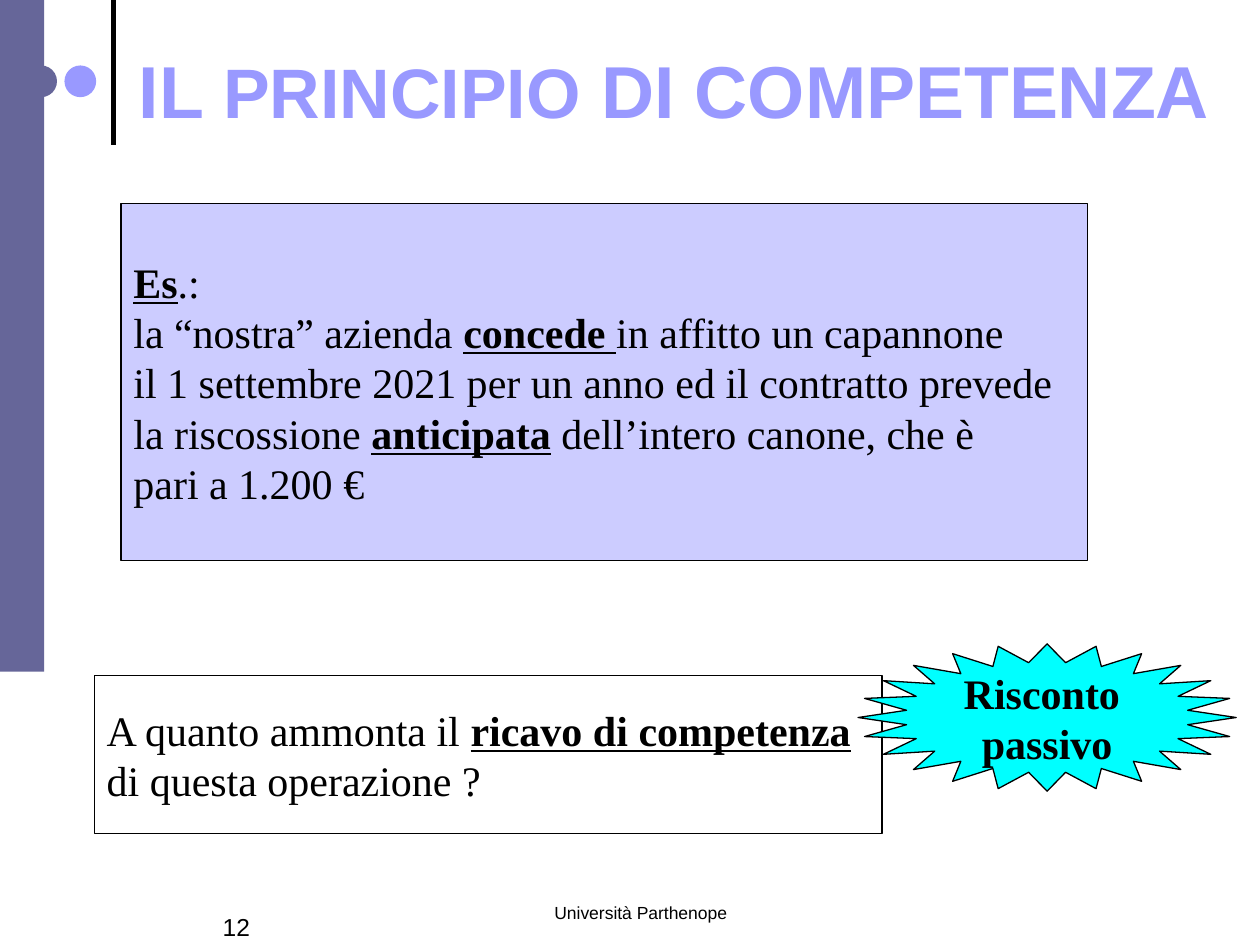
"""Build the slide on the accrual principle with its example, question and callout."""
from lxml import etree
from pptx import Presentation
from pptx.dml.color import RGBColor
from pptx.enum.shapes import MSO_CONNECTOR, MSO_SHAPE
from pptx.enum.text import MSO_ANCHOR, MSO_AUTO_SIZE, PP_ALIGN
from pptx.oxml.ns import qn
from pptx.util import Cm, Pt

RECTANGLE, OVAL, STAR = MSO_SHAPE.RECTANGLE, MSO_SHAPE.OVAL, MSO_SHAPE.STAR_24_POINT
LEFT, CENTER = PP_ALIGN.LEFT, PP_ALIGN.CENTER
TOP, MIDDLE = MSO_ANCHOR.TOP, MSO_ANCHOR.MIDDLE
TITLE_ONLY = 5

COLORS = {"black": "000000", "white": "FFFFFF", "slate": "666699",
          "violet": "9999FF", "lilac": "CCCCFF", "cyan": "00FFFF"}

# Every second part between asterisks is emphasised.
TITLE = [("IL ", 42), ("PRINCIPIO", 40), (" DI COMPETENZA", 42)]
DECORATIONS = [
    (OVAL, (0.51, 1.32, 0.64, 0.64), "slate"),
    (OVAL, (1.3, 1.32, 0.64, 0.64), "violet"),
    (RECTANGLE, (0, 0, 0.89, 13.54), "slate"),
]
PANELS = [
    (RECTANGLE, (2.44, 4.11, 19.48, 7.19), "lilac", LEFT, [
        "*Es*.:",
        "la “nostra” azienda *concede *in affitto un capannone",
        "il 1 settembre 2021 per un anno ed il contratto prevede",
        "la riscossione *anticipata* dell’intero canone, che è",
        "pari a 1.200 €"]),
    (RECTANGLE, (1.9, 13.62, 15.88, 3.18), "white", LEFT, [
        "A quanto ammonta il *ricavo di competenza*",
        "di questa operazione ?"]),
    (STAR, (17.3, 12.98, 7.62, 2.97), "cyan", CENTER, ["Risconto ", "passivo"]),
]
FOOTERS = [
    ((8.89, 18.06, 8.05, 1.27), "Università Parthenope", 10, CENTER),
    ((4.24, 18.26, 3.61, 1.27), "12", 14, LEFT),
]


def color(name):
    """Return the named colour."""
    return RGBColor.from_string(COLORS[name])


def place(bounds):
    """Turn centimetres into lengths."""
    return [Cm(value) for value in bounds]


def style(span, font, size, name, bold=False):
    """Format one run."""
    span.font.name, span.font.size, span.font.bold = font, Pt(size), bold
    span.font.color.rgb = color(name)


def add_block(page, kind, bounds, fill):
    """Add a filled preset shape without outline or shadow."""
    block = page.shapes.add_shape(kind, *place(bounds))
    block.shadow.inherit = False
    block.fill.solid()
    block.fill.fore_color.rgb = color(fill)
    block.line.fill.background()
    return block


def add_panel(page, kind, bounds, fill, align, lines):
    """Add an outlined shape with partly emphasised lines."""
    panel = add_block(page, kind, bounds, fill)
    panel.line.color.rgb = color("black")
    panel.line.width = Pt(0.75)
    frame = panel.text_frame
    frame.text = "\n".join(lines)
    frame.word_wrap, frame.vertical_anchor = False, MIDDLE
    for para, line in zip(frame.paragraphs, lines):
        para.text = ""
        para.alignment = align
        for index, part in enumerate(line.split("*")):
            if part:
                span = para.add_run()
                span.text = part
                emphasis = index % 2 == 1
                style(span, "Times New Roman", 24, "black", emphasis or kind == STAR)
                span.font.underline = emphasis


def add_footer(page, bounds, text, size, align):
    """Add a small text at the foot of the page."""
    frame = page.shapes.add_textbox(*place(bounds)).text_frame
    frame.text = text
    frame.word_wrap, frame.vertical_anchor = True, TOP
    para = frame.paragraphs[0]
    para.alignment = align
    style(para.runs[0], "Arial", size, "black")


def add_title(page):
    """Fill the title placeholder, keeping its text in the upper half."""
    title = page.shapes.title
    title.left, title.top, title.width, title.height = place((2.29, 0.53, 22.6, 4.24))
    frame = title.text_frame
    frame.auto_size, frame.vertical_anchor = MSO_AUTO_SIZE.NONE, MIDDLE
    frame.word_wrap = True
    frame.margin_bottom = Cm(1.83)
    para = frame.paragraphs[0]
    para.alignment = CENTER
    for text, size in TITLE:
        span = para.add_run()
        span.text = text
        style(span, "Arial", size, "violet", True)


def main():
    """Build and save the deck."""
    deck = Presentation()
    deck.slide_width, deck.slide_height = Cm(25.4), Cm(19.05)
    page = deck.slides.add_slide(deck.slide_layouts[TITLE_ONLY])
    rule = page.shapes.add_connector(MSO_CONNECTOR.STRAIGHT, *place((2.29, 2.92, 2.29, 0)))
    rule.line.color.rgb = color("black")
    rule.line.width = Pt(3)
    etree.SubElement(rule._element.spPr, qn("a:effectLst"))
    for decoration in DECORATIONS:
        add_block(page, *decoration)
    for footer in FOOTERS:
        add_footer(page, *footer)
    for panel in PANELS:
        add_panel(page, *panel)
    add_title(page)


    deck.save("out.pptx")


if __name__ == "__main__":
    main()
